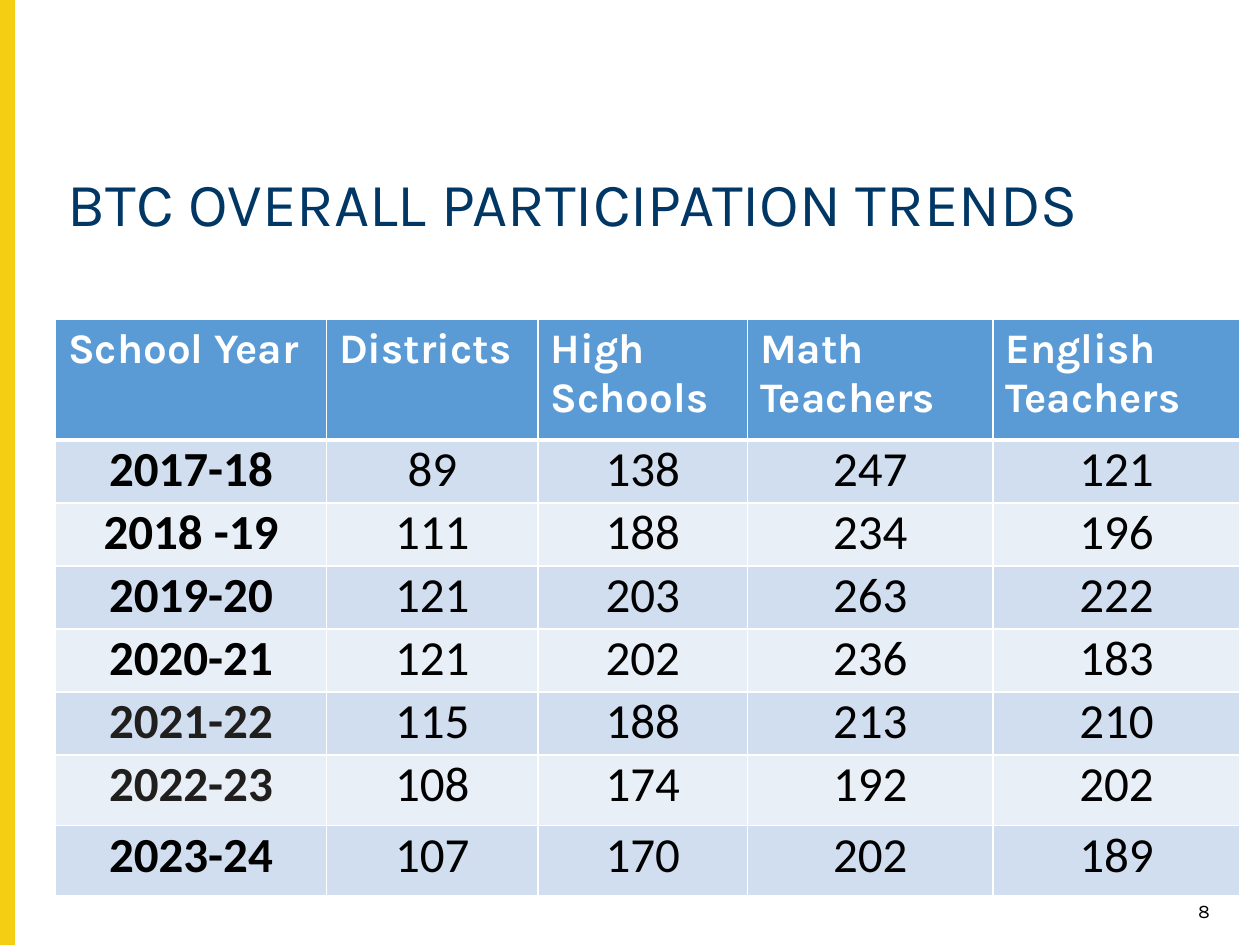
from pptx import Presentation
from pptx.dml.color import RGBColor
from pptx.enum.shapes import MSO_SHAPE
from pptx.enum.text import PP_ALIGN
from pptx.oxml.ns import qn
from pptx.util import Cm, Pt
from lxml import etree

LEFT, CENTER, RIGHT = PP_ALIGN.LEFT, PP_ALIGN.CENTER, PP_ALIGN.RIGHT
RECTANGLE = MSO_SHAPE.RECTANGLE

TITLE = "BTC OVERALL PARTICIPATION TRENDS"
PAGE_NUMBER = "8"
HEADERS = ["School Year", "Districts", "High Schools", "Math Teachers", "English Teachers"]
PARTICIPATION = [
    ("2017-18", 89, 138, 247, 121),
    ("2018 -19", 111, 188, 234, 196),
    ("2019-20", 121, 203, 263, 222),
    ("2020-21", 121, 202, 236, 183),
    ("2021-22", 115, 188, 213, 210),
    ("2022-23", 108, 174, 192, 202),
    ("2023-24", 107, 170, 202, 189),
]
SOFT_YEARS = {"2021-22", "2022-23"}
COL_WIDTHS = [5.46, 4.27, 4.22, 4.95, 4.98]
ROW_HEIGHTS = [2.44] + [1.27] * 5 + [1.42] * 2
COLORS = {
    "accent": "F4CE12",
    "title": "003764",
    "header": "5B9BD5",
    "odd": "D0DEEF",
    "even": "E9EFF7",
    "white": "FFFFFF",
    "black": "000000",
    "soft": "201F1E",
}


def rgb(name):
    return RGBColor.from_string(COLORS[name])


def style(p, font, size, color, align=LEFT, bold=False):
    p.alignment = align
    p.font.name = font
    p.font.size = Pt(size)
    p.font.bold = bold
    p.font.color.rgb = rgb(color)


def add_text(slide, text, box, size, color, align=LEFT):
    tf = slide.shapes.add_textbox(*map(Cm, box)).text_frame
    tf.word_wrap = True
    p = tf.paragraphs[0]
    p.text = text
    style(p, "Karla", size, color, align)
    return p


def set_borders(cell, top, bottom):
    """Draw white cell borders; top and bottom are widths in points."""
    tc_pr = cell._tc.get_or_add_tcPr()
    for side, width in (("L", 1), ("R", 1), ("T", top), ("B", bottom)):
        ln = etree.SubElement(tc_pr, qn(f"a:ln{side}"), w=str(Pt(width)))
        fill = etree.SubElement(ln, qn("a:solidFill"))
        etree.SubElement(fill, qn("a:srgbClr"), val=COLORS["white"])


def fill_cell(cell, row, col, value):
    set_borders(cell, top=3 if row == 1 else 1, bottom=3 if row == 0 else 1)
    cell.text = str(value)
    p = cell.text_frame.paragraphs[0]
    cell.fill.solid()
    if row == 0:
        cell.fill.fore_color.rgb = rgb("header")
        style(p, "Karla", 24, "white", bold=True)
        return
    cell.fill.fore_color.rgb = rgb("odd" if row % 2 else "even")
    cell.margin_left = cell.margin_right = Cm(0.18)
    cell.margin_top = cell.margin_bottom = 0
    color = "soft" if value in SOFT_YEARS else "black"
    style(p, "Calibri", 28, color, CENTER, bold=col == 0)


def add_participation_table(slide):
    rows = [HEADERS, *PARTICIPATION]
    table = slide.shapes.add_table(
        len(rows), len(HEADERS), Cm(1.12), Cm(6.43),
        Cm(sum(COL_WIDTHS)), Cm(sum(ROW_HEIGHTS))).table
    for column, width in zip(table.columns, COL_WIDTHS):
        column.width = Cm(width)
    for table_row, height in zip(table.rows, ROW_HEIGHTS):
        table_row.height = Cm(height)
    for i, values in enumerate(rows):
        for j, value in enumerate(values):
            fill_cell(table.cell(i, j), i, j, value)


def main():
    prs = Presentation()
    prs.slide_width, prs.slide_height = Cm(25.4), Cm(19.05)
    slide = prs.slides.add_slide(prs.slide_layouts[6])

    bar = slide.shapes.add_shape(RECTANGLE, 0, 0, Cm(0.28), prs.slide_height)
    bar.shadow.inherit = False
    bar.fill.solid()
    bar.fill.fore_color.rgb = bar.line.color.rgb = rgb("accent")
    bar.line.width = Pt(1)

    add_text(slide, PAGE_NUMBER, (23.34, 18.01, 1.3, 0.66), 11, "black", RIGHT)
    title = add_text(slide, TITLE, (1.12, 3.38, 24.28, 2.21), 35, "title")
    title.line_spacing = 0.9
    add_participation_table(slide)
    prs.save("out.pptx")


if __name__ == "__main__":
    main()
